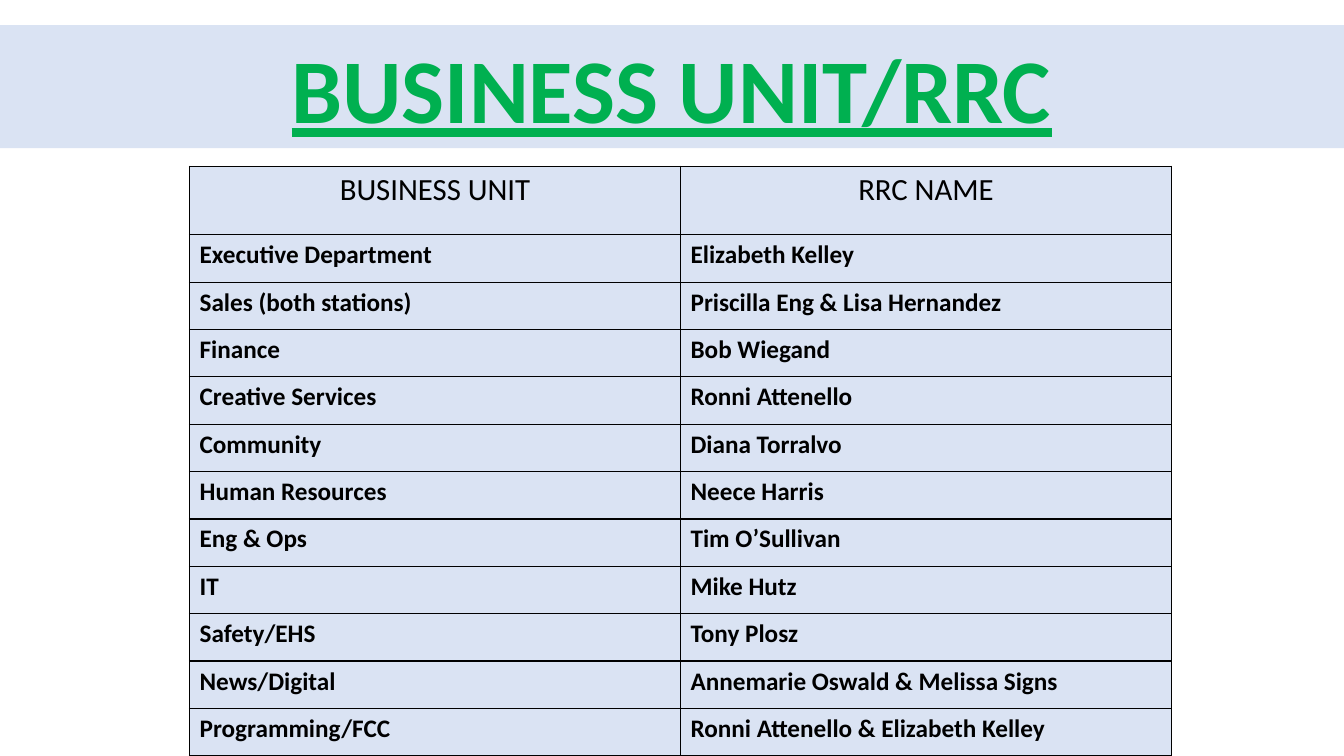
from typing import NamedTuple

import lxml.etree
import pptx
import pptx.dml.color
import pptx.enum.shapes
import pptx.enum.text
import pptx.oxml.ns
import pptx.util

Inches = pptx.util.Inches
Pt = pptx.util.Pt
CENTER = pptx.enum.text.PP_ALIGN.CENTER
LEFT = pptx.enum.text.PP_ALIGN.LEFT

PALE_BLUE = "DAE3F3"
GREEN = "00B050"
BLACK = "000000"
HEADER_HEIGHT = 0.68
ROW_HEIGHT = 0.47
COLUMN_WIDTH = 4.87


class Unit(NamedTuple):
    name: str
    rrc: str


class TextStyle(NamedTuple):
    size: float
    color: str
    bold: bool = False
    underline: bool = False
    align: pptx.enum.text.PP_ALIGN = LEFT


TITLE = TextStyle(65, GREEN, bold=True, underline=True, align=CENTER)
HEADER = TextStyle(22, BLACK, align=CENTER)
BODY = TextStyle(18, BLACK, bold=True)

UNITS = [
    Unit("BUSINESS UNIT", "RRC NAME"),
    Unit("Executive Department", "Elizabeth Kelley"),
    Unit("Sales (both stations)", "Priscilla Eng & Lisa Hernandez"),
    Unit("Finance", "Bob Wiegand"),
    Unit("Creative Services", "Ronni Attenello"),
    Unit("Community", "Diana Torralvo"),
    Unit("Human Resources", "Neece Harris"),
    Unit("Eng & Ops", "Tim O’Sullivan"),
    Unit("IT", "Mike Hutz"),
    Unit("Safety/EHS", "Tony Plosz"),
    Unit("News/Digital", "Annemarie Oswald & Melissa Signs"),
    Unit("Programming/FCC", "Ronni Attenello & Elizabeth Kelley"),
]


def rgb(color: str) -> pptx.dml.color.RGBColor:
    return pptx.dml.color.RGBColor.from_string(color)


def write(tf: pptx.text.text.TextFrame, text: str, style: TextStyle) -> None:
    p = tf.paragraphs[0]
    p.text = text
    p.alignment = style.align
    p.font.name = "Calibri"
    p.font.size = Pt(style.size)
    p.font.bold = style.bold
    p.font.underline = style.underline
    p.font.color.rgb = rgb(style.color)


def add_borders(cell: pptx.table._Cell, color: str, width: float) -> None:
    qn = pptx.oxml.ns.qn
    tcPr = cell._tc.get_or_add_tcPr()
    for side in ("a:lnL", "a:lnR", "a:lnT", "a:lnB"):
        ln = lxml.etree.SubElement(tcPr, qn(side), w=str(Pt(width)))
        fill = lxml.etree.SubElement(ln, qn("a:solidFill"))
        lxml.etree.SubElement(fill, qn("a:srgbClr"), val=color)


def add_title(s: pptx.slide.Slide) -> None:
    sp = s.shapes.add_shape(
        pptx.enum.shapes.MSO_SHAPE.RECTANGLE,
        Inches(0), Inches(0.25), Inches(13.33), Inches(1.22),
    )
    sp.shadow.inherit = False
    sp.fill.solid()
    sp.fill.fore_color.rgb = rgb(PALE_BLUE)
    sp.line.fill.background()
    tf = sp.text_frame
    tf.word_wrap = True
    tf.vertical_anchor = pptx.enum.text.MSO_ANCHOR.BOTTOM
    write(tf, "BUSINESS UNIT/RRC", TITLE)
    tf.paragraphs[0].line_spacing = 0.9


def add_unit_table(s: pptx.slide.Slide, units: list[Unit]) -> None:
    height = HEADER_HEIGHT + ROW_HEIGHT * (len(units) - 1)
    table = s.shapes.add_table(
        len(units), 2,
        Inches(1.88), Inches(1.65), Inches(2 * COLUMN_WIDTH), Inches(height),
    ).table
    table.horz_banding = False
    table.first_row = False
    for column in table.columns:
        column.width = Inches(COLUMN_WIDTH)
    for i, unit in enumerate(units):
        table.rows[i].height = Inches(ROW_HEIGHT if i else HEADER_HEIGHT)
        for cell, text in zip(table.rows[i].cells, unit):
            add_borders(cell, BLACK, 1)
            cell.fill.solid()
            cell.fill.fore_color.rgb = rgb(PALE_BLUE)
            write(cell.text_frame, text, BODY if i else HEADER)


def main() -> None:
    prs = pptx.Presentation()
    prs.slide_width = Inches(13.33)
    prs.slide_height = Inches(7.5)
    s = prs.slides.add_slide(prs.slide_layouts[6])
    add_title(s)
    add_unit_table(s, UNITS)
    prs.save("out.pptx")


if __name__ == "__main__":
    main()
